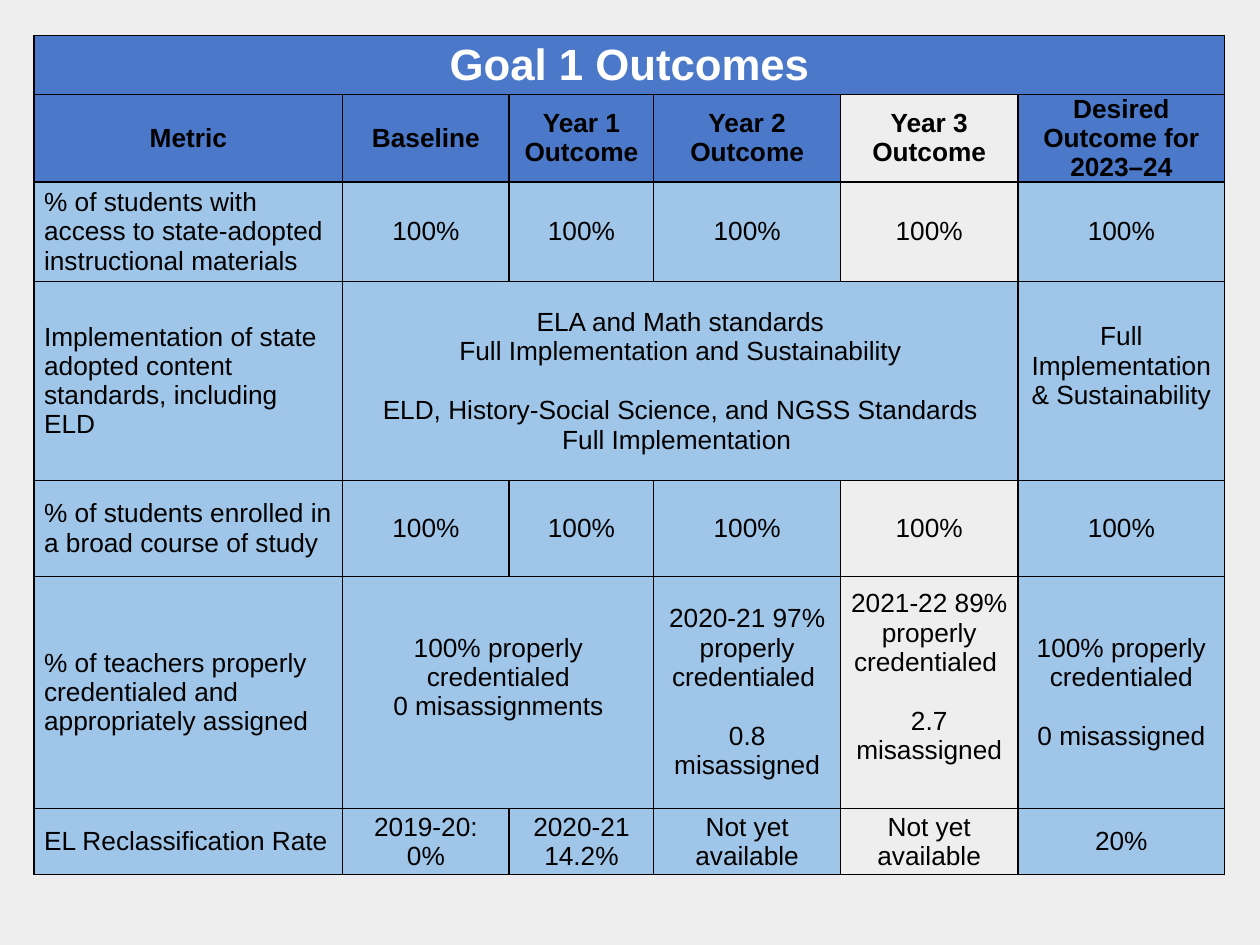
"""Build the Goal 1 outcomes table slide."""
from dataclasses import dataclass

from lxml.etree import SubElement
from pptx import Presentation
from pptx.dml.color import RGBColor
from pptx.enum.text import MSO_ANCHOR, PP_ALIGN
from pptx.oxml import parse_xml
from pptx.oxml.ns import nsdecls, qn
from pptx.table import Table, _Cell
from pptx.util import Pt

COLS = [176.4, 95.04, 82.8, 106.56, 101.52, 118.08]
ROWS = [33.84, 38.16, 56.88, 113.76, 54.72, 132.48, 38.16]
LEFT, TOP, INSET, LINE = 19.44, 20.16, 5.76, 17.25
HEADER, BODY, PAPER = "4B78C8", "9FC5E8", "EEEEEE"
YEAR_3 = 4


@dataclass
class Entry:
    text: str
    span: int = 1
    gap_before: int = 0
    space_below: float = 0


FULL = [Entry("100%")] * 5
CONTENT = [
    [Entry("Goal 1 Outcomes", span=6)],
    [Entry("Metric"), Entry("Baseline"), Entry("Year 1 Outcome"), Entry("Year 2 Outcome"),
     Entry("Year 3 Outcome"), Entry("Desired Outcome for 2023–24")],
    [Entry("% of students with access to state-adopted instructional materials"), *FULL],
    [Entry("Implementation of state adopted content standards, including ELD"),
     Entry("ELA and Math standards\nFull Implementation and Sustainability\n"
           "ELD, History-Social Science, and NGSS Standards\nFull Implementation ",
           span=4, gap_before=2),
     Entry("Full Implementation & Sustainability", space_below=LINE)],
    [Entry("% of students enrolled in a broad course of study"), *FULL],
    [Entry("% of teachers properly credentialed and appropriately assigned"),
     Entry("100% properly credentialed\n0 misassignments", span=2, space_below=LINE),
     Entry("2020-21 97% properly credentialed \n0.8 misassigned", gap_before=1),
     Entry("2021-22 89% properly credentialed \n2.7 misassigned", gap_before=1,
           space_below=LINE),
     Entry("100% properly credentialed\n0 misassigned", gap_before=1)],
    [Entry("EL Reclassification Rate"), Entry("2019-20: 0%"), Entry("2020-21\n14.2%"),
     Entry("Not yet available"), Entry("Not yet available"), Entry("20%")],
]


def rgb(value: str) -> RGBColor:
    return RGBColor.from_string(value)


def add_borders(cell: _Cell) -> None:
    tc_pr = cell._tc.get_or_add_tcPr()
    for i, side in enumerate(("lnL", "lnR", "lnT", "lnB")):
        ln = parse_xml(f'<a:{side} {nsdecls("a")} w="{Pt(0.75)}"/>')
        fill = SubElement(ln, qn("a:solidFill"))
        SubElement(fill, qn("a:srgbClr"), val="000000")
        tc_pr.insert(i, ln)


def fill_cell(cell: _Cell, entry: Entry, row: int, col: int) -> None:
    cell.vertical_anchor = MSO_ANCHOR.MIDDLE
    cell.margin_left = cell.margin_right = Pt(INSET)
    cell.margin_top, cell.margin_bottom = Pt(0), Pt(entry.space_below)
    cell.fill.solid()
    is_year_3 = col == YEAR_3 and entry.span == 1
    cell.fill.fore_color.rgb = rgb(PAPER if is_year_3 else HEADER if row < 2 else BODY)
    tf = cell.text_frame
    tf.text = entry.text
    for i, p in enumerate(tf.paragraphs):
        p.alignment = PP_ALIGN.LEFT if col == 0 and row > 1 else PP_ALIGN.CENTER
        if i and i == entry.gap_before:
            p.space_before = Pt(LINE)
        for r in p.runs:
            r.font.name = "Arial"
            r.font.size = Pt(25 if row == 0 else 15)
            r.font.bold = row < 2
            r.font.color.rgb = rgb("FFFFFF" if row == 0 else "000000")


def fill_table(table: Table) -> None:
    table.first_row = table.horz_banding = False
    for column, width in zip(table.columns, COLS):
        column.width = Pt(width)
    for row, height in zip(table.rows, ROWS):
        row.height = Pt(height)
    for row, entries in enumerate(CONTENT):
        col = 0
        for entry in entries:
            cell = table.cell(row, col)
            if entry.span > 1:
                cell.merge(table.cell(row, col + entry.span - 1))
            fill_cell(cell, entry, row, col)
            col += entry.span
    for cell in table.iter_cells():
        add_borders(cell)


def main() -> None:
    prs = Presentation()
    prs.slide_width, prs.slide_height = Pt(720), Pt(540)
    s = prs.slides.add_slide(prs.slide_layouts[6])
    s.background.fill.solid()
    s.background.fill.fore_color.rgb = rgb(PAPER)
    frame = s.shapes.add_table(len(ROWS), len(COLS), Pt(LEFT), Pt(TOP),
                               Pt(sum(COLS)), Pt(sum(ROWS)))
    fill_table(frame.table)
    prs.save("out.pptx")


if __name__ == "__main__":
    main()
